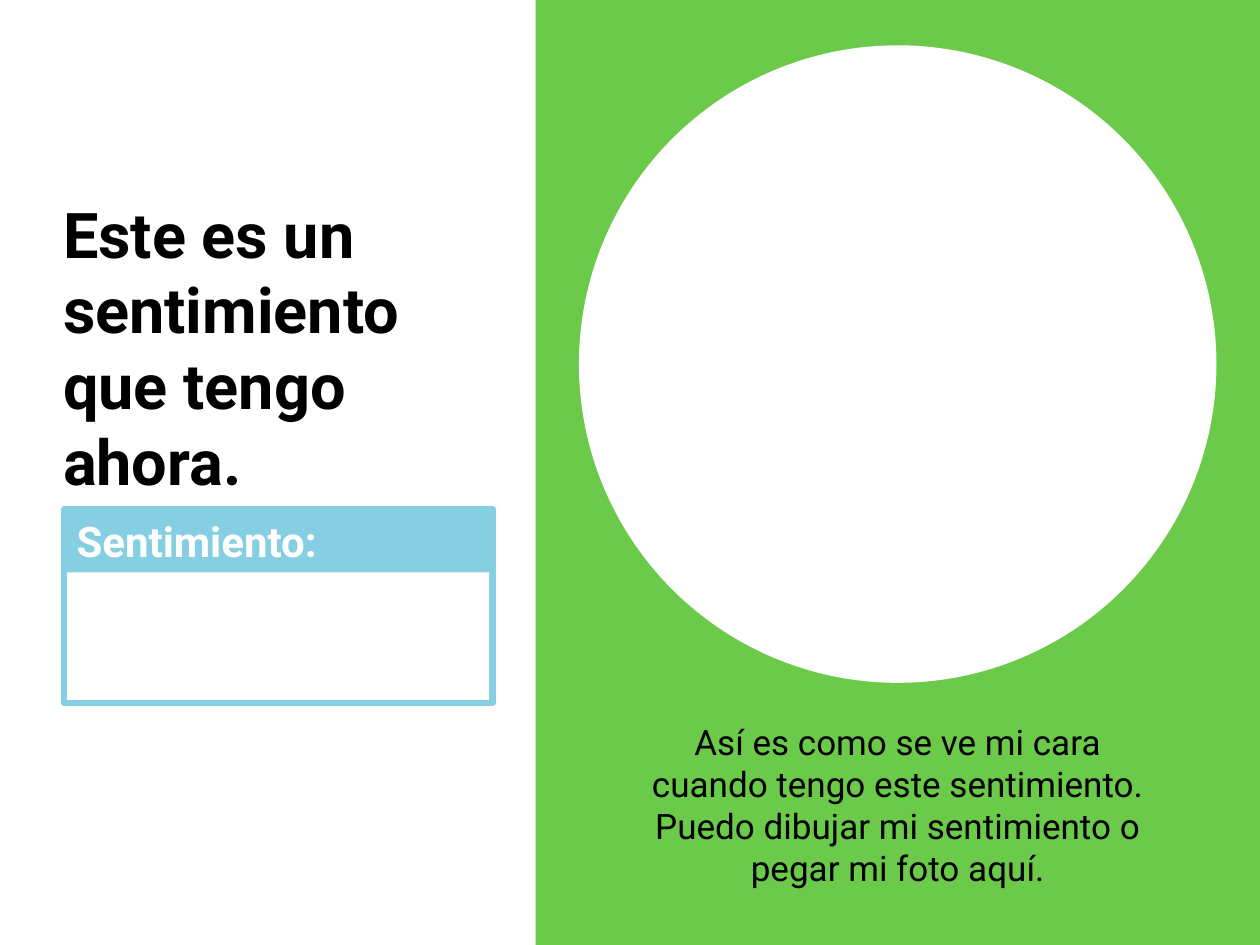
from pptx import Presentation
from pptx.dml.color import RGBColor
from pptx.enum.shapes import MSO_SHAPE as SHAPE
from pptx.enum.text import MSO_ANCHOR as ANCHOR, MSO_AUTO_SIZE as AUTO, PP_ALIGN as ALIGN
from pptx.util import Inches, Pt

W, H = 10, 7.5
BLUE, GREEN, WHITE, BLACK = "86CFE2", "6BCA49", "FFFFFF", "000000"
TITLE = dict(size=Pt(36), bold=True)
LABEL = dict(size=Pt(24), bold=True)
CAPTION = dict(size=Pt(20), bold=False)


def rgb(value):
    return RGBColor.from_string(value)


def place(sp, box):
    for name, value in zip(("left", "top", "width", "height"), box):
        setattr(sp, name, Inches(value))


def add_shape(slide, kind, box, fill=None, line=None):
    sp = slide.shapes.add_shape(kind, *map(Inches, box))
    sp.shadow.inherit = False
    if fill:
        sp.fill.solid()
        sp.fill.fore_color.rgb = rgb(fill)
    else:
        sp.fill.background()
    if line:
        sp.line.color.rgb = rgb(line)
        sp.line.width = Pt(3.5)
    else:
        sp.line.fill.background()
    return sp


def write(sp, text, fmt, color, align=ALIGN.LEFT):
    tf = sp.text_frame
    frame = dict(word_wrap=True, auto_size=AUTO.NONE, vertical_anchor=ANCHOR.TOP)
    for name, value in frame.items():
        setattr(tf, name, value)
    p = tf.paragraphs[0]
    p.alignment = align
    r = p.add_run()
    r.text = text
    for name, value in dict(fmt, name="Roboto").items():
        setattr(r.font, name, value)
    r.font.color.rgb = rgb(color)


def add_title(slide, box):
    title = slide.shapes.title
    place(title, box)
    write(title, "Este es un sentimiento que tengo ahora.", TITLE, BLACK)


def add_feeling_box(slide, box):
    x, y, w, h = box
    header = add_shape(slide, SHAPE.RECTANGLE, (x, y, w, 0.5), fill=BLUE)
    write(header, "Sentimiento:", LABEL, WHITE)
    add_shape(slide, SHAPE.RECTANGLE, box, line=BLUE)


def add_face_panel(slide, box):
    x, y, w, h = box
    add_shape(slide, SHAPE.RECTANGLE, box, fill=GREEN)
    margin, size = 0.13 * w, 0.88 * w
    caption = slide.shapes.add_textbox(
        *map(Inches, (x + margin, y + 0.756 * h, w - 2 * margin, 0.193 * h)))
    write(caption, "Así es como se ve mi cara cuando tengo este sentimiento. "
          "Puedo dibujar mi sentimiento o pegar mi foto aquí.",
          CAPTION, BLACK, ALIGN.CENTER)
    add_shape(slide, SHAPE.OVAL, (x + (w - size) / 2, y + 0.048 * h, size, size), fill=WHITE)


def main():
    prs = Presentation()
    prs.slide_width, prs.slide_height = Inches(W), Inches(H)
    slide = prs.slides.add_slide(prs.slide_layouts[5])
    split = 0.425 * W
    add_title(slide, (0.04 * W, 0.2 * H, 0.366 * W, 0.33 * H))
    add_feeling_box(slide, (0.051 * W, 0.539 * H, 0.34 * W, 0.205 * H))
    add_face_panel(slide, (split, 0, W - split, H))
    prs.save("out.pptx")


if __name__ == "__main__":
    main()
